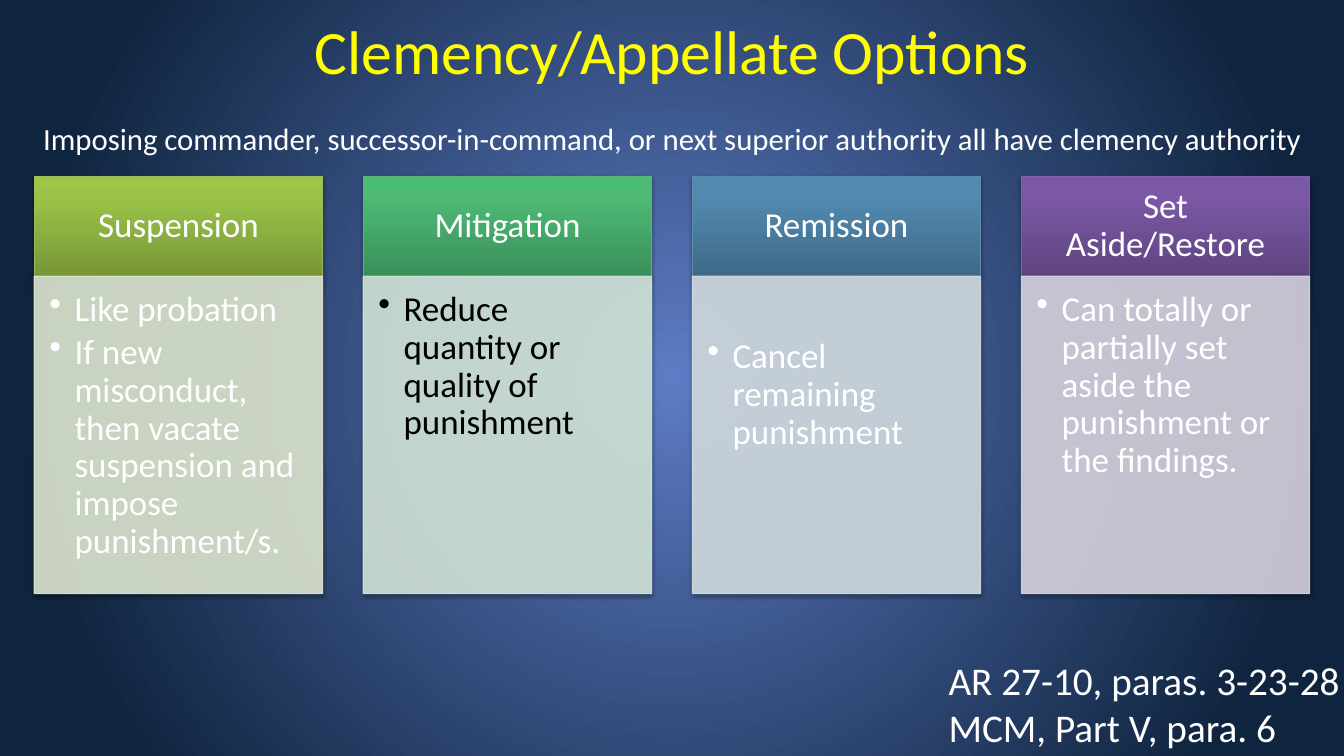
from lxml import etree
from pptx import Presentation
from pptx.dml.color import RGBColor
from pptx.enum.shapes import MSO_SHAPE
from pptx.enum.text import MSO_ANCHOR, PP_ALIGN
from pptx.oxml import parse_xml
from pptx.oxml.ns import nsdecls, qn
from pptx.util import Inches, Pt

RECTANGLE = MSO_SHAPE.RECTANGLE
TOP, MIDDLE = MSO_ANCHOR.TOP, MSO_ANCHOR.MIDDLE
LEFT, CENTER = PP_ALIGN.LEFT, PP_ALIGN.CENTER
UPWARD = '<a:lin ang="16200000" scaled="0"/>'
FROM_CENTER = ('<a:path path="circle"><a:fillToRect l="50000" t="50000" '
               'r="50000" b="50000"/></a:path>')
SHADOW = ('<a:outerShdw %s blurRad="40000" dist="23000" dir="5400000" rotWithShape="0">'
          '<a:srgbClr val="000000"><a:alpha val="35000"/></a:srgbClr></a:outerShdw>')

WIDTH, HEIGHT = 13.33, 7.5
MARGIN = 0.34
CARD_WIDTH, HEADER_TOP, HEADER_HEIGHT, BODY_HEIGHT = 2.86, 1.75, 0.99, 3.15
HEADER_INSETS = (0.19, 0.11, 0.19, 0.11)

# heading, header stops at 0, 80 and 100 percent, header line, body fill,
# body text colour, top inset of the body, bullets
OPTIONS = [
    ("Suspension", ("779737", "9BC348", "9DC746"), "9BBB59", "DEE7D1", "FFFFFF", 0.15,
     ["Like probation",
      "If new misconduct, then vacate suspension and impose punishment/s."]),
    ("Mitigation", ("3B8F5A", "4DBA75", "4BBD75"), "5CB37C", "D2E5D9", "000000", 0.15,
     ["Reduce quantity or quality of punishment"]),
    ("Remission", ("3F6A88", "528AB0", "518BB3"), "608CAB", "D2DCE2", "FFFFFF", 0.62,
     ["Cancel remaining punishment"]),
    ("Set Aside/Restore", ("5F4480", "7B58A6", "7C57A8"), "8064A2", "D8D3E0", "FFFFFF", 0.15,
     ["Can totally or partially set aside the punishment or the findings."]),
]


def write_text(shape, lines, size, color="FFFFFF", align=LEFT, anchor=TOP,
               insets=(0.1, 0.05, 0.1, 0.05), spacing=None, after=0, bullet=False):
    frame = shape.text_frame
    frame.word_wrap = True
    frame.vertical_anchor = anchor
    (frame.margin_left, frame.margin_top,
     frame.margin_right, frame.margin_bottom) = [Inches(inset) for inset in insets]
    for index, line in enumerate(lines):
        para = frame.add_paragraph() if index else frame.paragraphs[0]
        para.alignment = align
        para.space_before, para.space_after = Pt(0), Pt(after)
        if spacing:
            para.line_spacing = spacing
        if bullet:
            properties = para._p.get_or_add_pPr()
            properties.set("marL", str(Inches(0.25)))
            properties.set("indent", str(-Inches(0.25)))
            etree.SubElement(properties, qn("a:buChar")).set("char", "•")
        span = para.add_run()
        span.text = line
        span.font.name, span.font.size = "Calibri", Pt(size)
        span.font.color.rgb = RGBColor.from_string(color)


def fill_gradient(fill, owner, stops, direction):
    """Fill with (percent, colour) stops; owner is the XML element that holds the fill."""
    fill.gradient()
    stop_list = "".join(f'<a:gs pos="{percent * 1000}"><a:srgbClr val="{color}"/></a:gs>'
                        for percent, color in stops)
    old = owner.find(".//" + qn("a:gradFill"))
    old.getparent().replace(old, parse_xml(
        f'<a:gradFill {nsdecls("a")} rotWithShape="1"><a:gsLst>{stop_list}</a:gsLst>'
        f'{direction}</a:gradFill>'))


deck = Presentation()
deck.slide_width, deck.slide_height = Inches(WIDTH), Inches(HEIGHT)
page = deck.slides.add_slide(deck.slide_layouts[5])
fill_gradient(page.background.fill, page.element,
              [(0, "5E7CC5"), (85, "0F243E")], FROM_CENTER)

title = page.shapes.title
title.left, title.top = Inches(0.67), Inches(0.08)
title.width, title.height = Inches(12), Inches(0.83)
write_text(title, ["Clemency/Appellate Options"], size=44, color="FFFF00",
           align=CENTER, anchor=MIDDLE)

pitch = (WIDTH - 2 * MARGIN - CARD_WIDTH) / (len(OPTIONS) - 1)
for column, option in enumerate(OPTIONS):
    heading, header_colors, header_line, body_color, text_color, body_inset, bullets = option
    left = Inches(MARGIN + column * pitch)
    header = page.shapes.add_shape(RECTANGLE, left, Inches(HEADER_TOP),
                                   Inches(CARD_WIDTH), Inches(HEADER_HEIGHT))
    body = page.shapes.add_shape(RECTANGLE, left, Inches(HEADER_TOP + HEADER_HEIGHT),
                                 Inches(CARD_WIDTH), Inches(BODY_HEIGHT))
    fill_gradient(header.fill, header.element, zip((0, 80, 100), header_colors), UPWARD)
    body.fill.solid()
    body.fill.fore_color.rgb = RGBColor.from_string(body_color)
    for box, line_color in ((header, header_line), (body, body_color)):
        box.line.color.rgb = RGBColor.from_string(line_color)
        box.line.width = Pt(0.75)
        box.shadow.inherit = False
        effects = box.element.spPr.find(qn("a:effectLst"))
        effects.append(parse_xml(SHADOW % nsdecls("a")))
    for color in body.element.spPr.findall(qn("a:solidFill") + "/" + qn("a:srgbClr")) + \
            body.element.spPr.findall(qn("a:ln") + "//" + qn("a:srgbClr")):
        etree.SubElement(color, qn("a:alpha")).set("val", "90000")
    write_text(header, [heading], size=25, align=CENTER, anchor=MIDDLE,
               insets=HEADER_INSETS, spacing=0.9)
    write_text(body, bullets, size=25, color=text_color,
               insets=(0.15, body_inset, 0.19, 0.22), spacing=0.9, after=3.75, bullet=True)

authority = page.shapes.add_textbox(Inches(0.33), Inches(1.14), Inches(13), Inches(0.47))
write_text(authority, ["Imposing commander, successor-in-command, or next superior "
                       "authority all have clemency authority"], size=22)

references = page.shapes.add_textbox(Inches(9.31), Inches(6.46), Inches(4.19), Inches(1.04))
write_text(references, ["AR 27-10, paras. 3-23-28", "MCM, Part V, para. 6"], size=28)

deck.save("out.pptx")
